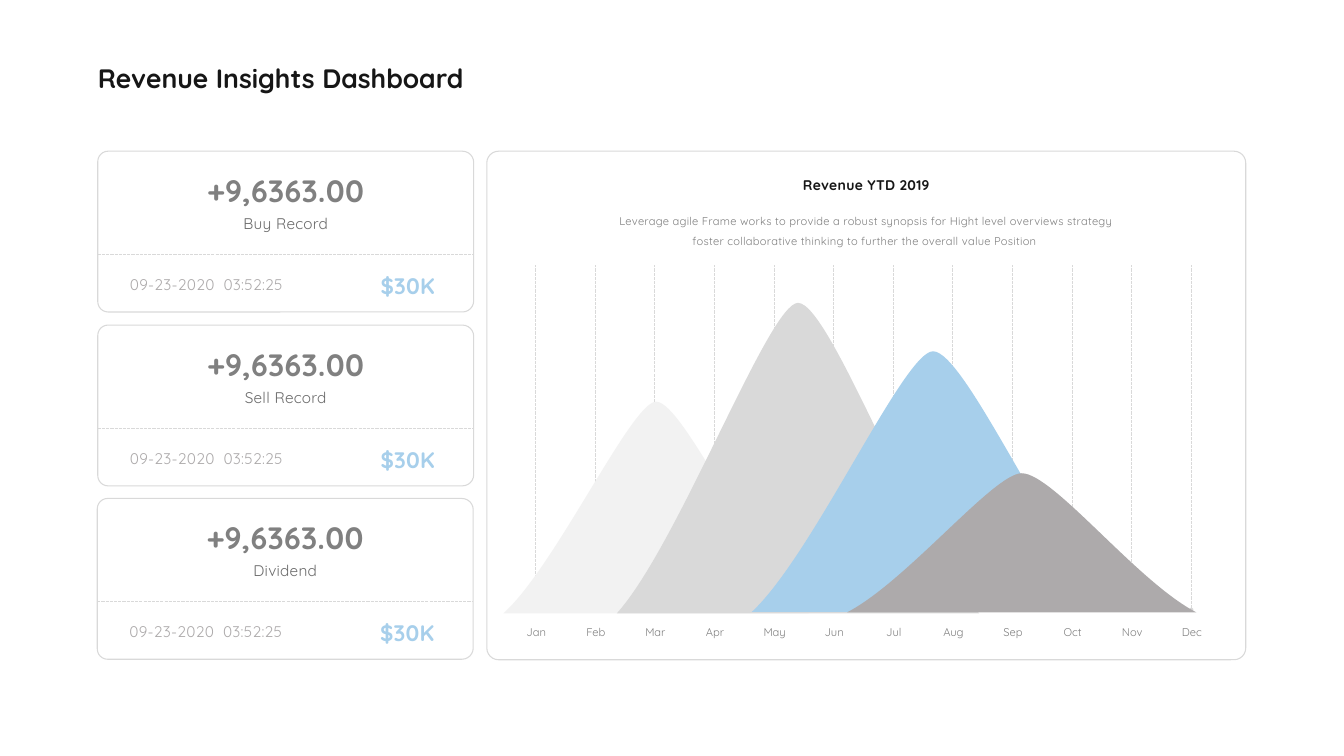
from lxml import etree
from pptx import Presentation
from pptx.dml.color import RGBColor
from pptx.enum.dml import MSO_LINE
from pptx.enum.shapes import MSO_CONNECTOR, MSO_SHAPE
from pptx.enum.text import MSO_ANCHOR, MSO_AUTO_SIZE, PP_ALIGN
from pptx.oxml.ns import qn
from pptx.util import Inches, Pt

STRAIGHT = MSO_CONNECTOR.STRAIGHT
ROUNDED_ENDS = MSO_SHAPE.ROUND_2_SAME_RECTANGLE
DASH = MSO_LINE.SQUARE_DOT
TOP, MIDDLE, BOTTOM = MSO_ANCHOR.TOP, MSO_ANCHOR.MIDDLE, MSO_ANCHOR.BOTTOM
LEFT, CENTER, RIGHT = PP_ALIGN.LEFT, PP_ALIGN.CENTER, PP_ALIGN.RIGHT
FIT_SHAPE, FIT_NONE = MSO_AUTO_SIZE.SHAPE_TO_FIT_TEXT, MSO_AUTO_SIZE.NONE

FONT = "Quicksand"
COLORS = {
    "ink": "161616",
    "label": "6C6C6C",
    "grey": "808080",
    "stone": "ADAAAB",
    "rule": "D9D9D9",
    "pale": "F2F2F2",
    "sky": "A7CFEB",
}
WIDE_INSETS = (0.2, 0.1)
MONTHS = ["Jan", "Feb", "Mar", "Apr", "May", "Jun",
          "Jul", "Aug", "Sep", "Oct", "Nov", "Dec"]
DESCRIPTION = ("Leverage agile Frame works to provide a robust synopsis for Hight level "
               "overviews strategy foster collaborative thinking to further the overall "
               "value Position ")

HILL_FOOT, HILL_PEAK, HILL_END = (0, 1), (0.5, 0), (1, 1)
HILL_CURVES = [
    [(0.17, 0.78), (0.42, 0), (0.5, 0)],
    [(0.59, 0), (0.83, 0.78), (1, 1)],
]


def rgb(name):
    return RGBColor.from_string(COLORS[name])


def add_text(slide, text, box, size, color, bold=False, align=LEFT, anchor=TOP,
             insets=(0.1, 0.05), tracking=0, margin=None, line_spacing=None,
             fit=FIT_SHAPE, holder=None):
    left, top, width, height = (Inches(v) for v in box)
    holder = holder or slide.shapes.add_textbox(left, top, width, height)
    holder.left, holder.top, holder.width, holder.height = left, top, width, height
    frame = holder.text_frame
    frame.word_wrap = True
    frame.auto_size = fit
    frame.vertical_anchor = anchor
    frame.margin_left = frame.margin_right = Inches(insets[0])
    frame.margin_top = frame.margin_bottom = Inches(insets[1])
    paragraph = frame.paragraphs[0]
    paragraph.alignment = align
    if margin is not None:
        paragraph.space_before = paragraph.space_after = Pt(margin)
    if line_spacing:
        paragraph.line_spacing = line_spacing
    run = paragraph.add_run()
    run.text = text
    run.font.name, run.font.size, run.font.bold = FONT, Pt(size), bold
    run.font.color.rgb = rgb(color)
    if tracking:
        run._r.get_or_add_rPr().set("spc", str(round(tracking * 100)))


def add_panel(slide, box, corners):
    left, top, width, height = box
    panel = slide.shapes.add_shape(
        ROUNDED_ENDS,
        Inches(left + (width - height) / 2), Inches(top + (height - width) / 2),
        Inches(height), Inches(width))
    panel.rotation = 90
    panel.adjustments[0], panel.adjustments[1] = corners
    panel.fill.background()
    panel.line.color.rgb = rgb("rule")
    panel.line.width = Pt(1.5)
    panel.shadow.inherit = False


def add_dashed_line(slide, start, end, oval_start=False):
    rule = slide.shapes.add_connector(STRAIGHT, *(Inches(v) for v in (*start, *end)))
    rule.line.color.rgb = rgb("rule")
    rule.line.width = Pt(1.5)
    rule.line.dash_style = DASH
    if oval_start:
        etree.SubElement(rule.line._get_or_add_ln(), qn("a:headEnd"), type="oval")
    etree.SubElement(rule._element.spPr, qn("a:effectLst"))


def add_hill(slide, box, color):
    left, top, width, height = box
    foot, peak, end = [(Inches(left + x * width), Inches(top + y * height))
                       for x, y in (HILL_FOOT, HILL_PEAK, HILL_END)]
    builder = slide.shapes.build_freeform(*foot)
    builder.add_line_segments([peak, end, foot], close=True)
    hill = builder.convert_to_shape()
    segments = list(hill._element.iter(qn("a:lnTo")))
    for segment, controls in zip(segments, HILL_CURVES):
        curve = etree.Element(qn("a:cubicBezTo"))
        for x, y in controls:
            etree.SubElement(curve, qn("a:pt"), x=str(round(x * hill.width)),
                             y=str(round(y * hill.height)))
        segment.getparent().replace(segment, curve)
    hill.fill.solid()
    hill.fill.fore_color.rgb = rgb(color)
    hill.line.fill.background()
    hill.shadow.inherit = False


def add_title(slide, box):
    add_text(slide, "Revenue Insights Dashboard", box, 38, "ink", bold=True,
             insets=(0, 0), holder=slide.shapes.title)


def add_record_card(slide, box, label):
    left, top, width, _ = box
    add_panel(slide, box, (0.07, 0.064))
    add_dashed_line(slide, (left, top + 2.05), (left + width, top + 2.05))
    add_text(slide, label, (left + 0.76, top + 1.15, 5.94, 0.58), 22, "label",
             align=CENTER, insets=WIDE_INSETS, tracking=0.4, margin=12)
    add_text(slide, "+9,6363.00", (left + 1.69, top + 0.42, 4.08, 0.71), 44, "grey",
             bold=True, align=CENTER, anchor=MIDDLE, insets=WIDE_INSETS,
             tracking=0.4, fit=FIT_NONE)
    add_text(slide, "09-23-2020  03:52:25", (left + 0.44, top + 2.36, 3.66, 0.58), 22,
             "stone", insets=WIDE_INSETS, tracking=0.4, margin=12)
    add_text(slide, "$30K", (left + 4.94, top + 2.31, 1.95, 0.71), 32, "sky",
             bold=True, align=RIGHT, anchor=MIDDLE, insets=WIDE_INSETS,
             tracking=0.4, fit=FIT_NONE)


def add_revenue_panel(slide, box):
    left, top, _, _ = box
    add_panel(slide, box, (0.023, 0.023))
    add_text(slide, "Revenue YTD 2019", (left + 4.82, top + 0.39, 5.42, 0.54), 20, "ink",
             bold=True, align=CENTER, anchor=BOTTOM, insets=WIDE_INSETS, tracking=0.4)
    add_text(slide, DESCRIPTION, (left + 2.47, top + 1.07, 10.13, 0.86), 16, "grey",
             align=CENTER, tracking=0.4, line_spacing=1.5)

    first_month, last_month = left + 0.97, left + 13.98
    month_gap = (last_month - first_month) / (len(MONTHS) - 1)
    month_lines = [first_month + index * month_gap for index in range(len(MONTHS))]
    for x in month_lines:
        add_dashed_line(slide, (x, top + 9.1), (x, top + 2.26), oval_start=True)
    for x, month in zip(month_lines, MONTHS):
        add_text(slide, month, (x - 0.58, top + 9.36, 1.18, 0.37), 16, "grey",
                 align=CENTER, anchor=MIDDLE)

    hills = [
        (0.33, 4.97, 6.06, 4.2, "pale"),
        (2.58, 3.01, 7.19, 6.16, "rule"),
        (5.26, 3.97, 7.19, 5.17, "sky"),
        (7.15, 6.39, 6.93, 2.76, "stone"),
    ]
    for dx, dy, width, height, color in hills:
        add_hill(slide, (left + dx, top + dy, width, height), color)


def main():
    deck = Presentation()
    deck.slide_width, deck.slide_height = Inches(26.67), Inches(15)
    slide = deck.slides.add_slide(deck.slide_layouts[5])
    add_title(slide, (1.94, 1.23, 17.14, 0.64))
    records = [("Buy Record", 1.94, 3), ("Sell Record", 1.94, 6.45),
               ("Dividend", 1.93, 9.89)]
    for label, left, top in records:
        add_record_card(slide, (left, top, 7.46, 3.19), label)
    add_revenue_panel(slide, (9.66, 3, 15.06, 10.09))
    deck.save("out.pptx")


if __name__ == "__main__":
    main()
